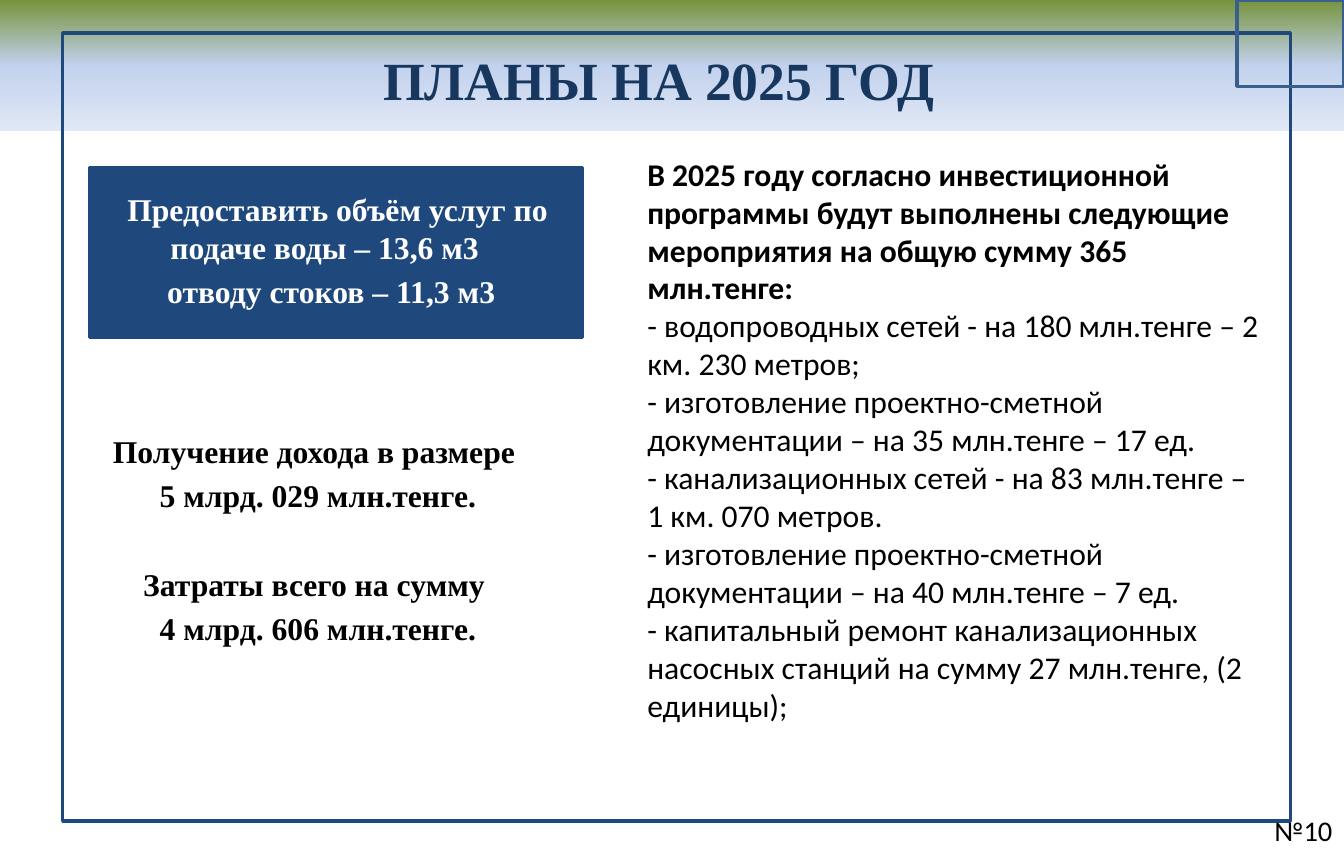
"""Build the slide with the plans for 2025."""
from copy import deepcopy

from pptx import Presentation
from pptx.dml.color import RGBColor
from pptx.enum.shapes import MSO_SHAPE
from pptx.enum.text import PP_ALIGN
from pptx.oxml.ns import qn
from pptx.util import Inches, Pt

RECT = MSO_SHAPE.RECTANGLE
LEFT, MID = PP_ALIGN.LEFT, PP_ALIGN.CENTER
NAVY = RGBColor(0x1F, 0x49, 0x7D)
DARK = RGBColor(0x17, 0x37, 0x5E)
STEEL = RGBColor(0x3A, 0x5F, 0x8C)
BLACK = RGBColor(0, 0, 0)
WHITE = RGBColor(255, 255, 255)
FADE = [
    (0, RGBColor(0x77, 0x93, 0x3C)),
    (0.5, RGBColor(0xC2, 0xD1, 0xED)),
    (1, RGBColor(0xE1, 0xE8, 0xF5)),
]
SERIF, SANS = "Times New Roman", "Calibri"
WIDE, HIGH = Pt(850.5), Pt(540)

TITLE = ["ПЛАНЫ НА 2025 ГОД"]
GOALS = [
    "Предоставить объём услуг по подаче воды – 13,6 м3",
    "отводу стоков – 11,3 м3",
]
MONEY = [
    "Получение дохода в размере ",
    "5 млрд. 029 млн.тенге.",
    "Затраты всего на сумму ",
    "4 млрд. 606 млн.тенге.",
]
WORKS = [
    "В 2025 году согласно инвестиционной программы будут выполнены "
    "следующие мероприятия на общую сумму 365 млн.тенге:",
    "- водопроводных сетей - на 180 млн.тенге – 2 км. 230 метров;",
    "- изготовление проектно-сметной документации – на 35 млн.тенге – 17 ед.",
    "- канализационных сетей - на 83 млн.тенге – 1 км. 070 метров.",
    "- изготовление проектно-сметной документации – на 40 млн.тенге – 7 ед.",
    "- капитальный ремонт канализационных насосных станций на сумму "
    "27 млн.тенге, (2 единицы);",
]
PAGE = ["№10"]

BAND = (0, 0, 100, 15.33)
HEAD = (11.35, 4.8, 75.36, 8.93)
PANEL = (6.69, 19.6, 36.66, 20)
GOAL = (8.64, 21.6, 35.31, 21.07)
FRAME = (4.66, 3.87, 91.36, 92.4)
SUMS = (6.01, 50, 35.31, 32.8)
PLAN = (47.33, 17.47, 47.33, 82.53)
CORNER = (92.04, 0, 7.96, 10.13)
FOOT = (93.99, 94.67, 6.01, 5.33)


def place(area):
    """Turn percent of the slide into lengths."""
    return [int(part * side / 100) for part, side in zip(area, (WIDE, HIGH) * 2)]


def rect(slide, area, edge=None, fill=None):
    shape = slide.shapes.add_shape(RECT, *place(area))
    shape.shadow.inherit = False
    if fill is None:
        shape.fill.background()
    else:
        shape.fill.solid()
        shape.fill.fore_color.rgb = fill
    if edge is None:
        shape.line.fill.background()
    else:
        shape.line.color.rgb = edge
        shape.line.width = Pt(2)
    return shape


def fade(shape):
    shape.fill.gradient()
    shape.fill.gradient_angle = 270
    stops = shape._element.spPr.find(".//" + qn("a:gsLst"))
    stops.append(deepcopy(stops[0]))
    for stop, (spot, color) in zip(shape.fill.gradient_stops, FADE):
        stop.position = spot
        stop.color.rgb = color


def write(slide, area, lines, face, size, color=BLACK, bold=True,
          align=LEFT, gap=0, wrap=True):
    frame = slide.shapes.add_textbox(*place(area)).text_frame
    frame.word_wrap = wrap
    for row, line in enumerate(lines):
        para = frame.add_paragraph() if row else frame.paragraphs[0]
        para.text = line
        para.alignment = align
        para.space_before = Pt(gap)
        font = para.font
        font.name, font.size, font.bold = face, Pt(size), bold
        font.color.rgb = color
    return frame.paragraphs


def main():
    deck = Presentation()
    deck.slide_width, deck.slide_height = WIDE, HIGH
    slide = deck.slides.add_slide(deck.slide_layouts[6])

    fade(rect(slide, BAND))
    write(slide, HEAD, TITLE, SERIF, 34, DARK, align=MID)
    rect(slide, PANEL, NAVY, NAVY)
    goals = write(slide, GOAL, GOALS, SERIF, 20, WHITE, gap=4)
    for para, shift in zip(goals, (-0.38, -0.03)):
        props = para._p.get_or_add_pPr()
        props.set("marL", str(Inches(0.38)))
        props.set("indent", str(Inches(shift)))
    rect(slide, FRAME, NAVY)
    sums = write(slide, SUMS, MONEY, SERIF, 20, align=MID, gap=4)
    sums[2].space_before = Pt(32)
    works = write(slide, PLAN, WORKS, SANS, 20, bold=False)
    works[0].font.bold = True
    rect(slide, CORNER, STEEL)
    write(slide, FOOT, PAGE, SANS, 18, bold=False, wrap=False)
    deck.save("out.pptx")


if __name__ == "__main__":
    main()
